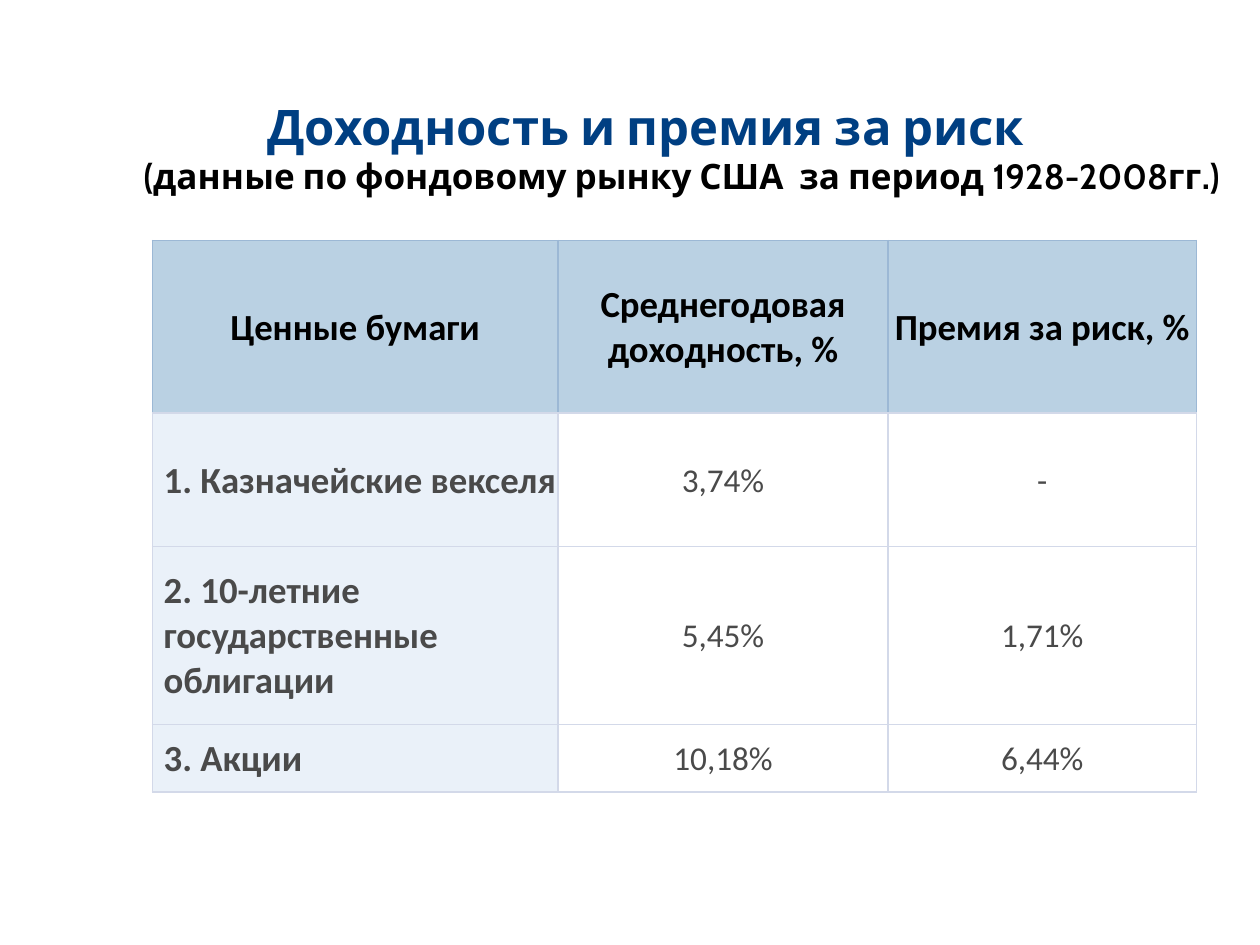
from dataclasses import dataclass

from lxml.etree import SubElement
from pptx import Presentation
from pptx.dml.color import RGBColor
from pptx.enum.text import MSO_ANCHOR, PP_ALIGN
from pptx.oxml.ns import qn
from pptx.util import Cm, Pt

HEADER_LINE = "9CB8D5"
BODY_LINE = "D3D9E9"


@dataclass
class CellStyle:
    size: int
    bold: bool
    color: str
    fill: str | None
    line: str
    align: PP_ALIGN = PP_ALIGN.CENTER
    margin_left: float = 0.03


HEADER = CellStyle(21, True, "000000", "BAD1E3", HEADER_LINE)
LABEL = CellStyle(21, True, "4A4A4A", "EAF1F9", BODY_LINE, PP_ALIGN.LEFT, 0.23)
VALUE = CellStyle(19, False, "4A4A4A", None, BODY_LINE)

COLUMN_WIDTHS = [8.18, 6.65, 6.22]
ROW_HEIGHTS = [3.48, 2.69, 3.58, 1.37]
ROWS = [
    ("Ценные бумаги", "Среднегодовая доходность, %", "Премия за риск, %"),
    ("1. Казначейские векселя", "3,74%", "-"),
    ("2. 10-летние государственные облигации", "5,45%", "1,71%"),
    ("3. Акции", "10,18%", "6,44%"),
]


def rgb(color: str) -> RGBColor:
    return RGBColor.from_string(color)


def set_font(para, name: str, size: int, bold: bool, color: str) -> None:
    font = para.font
    font.name, font.size, font.bold = name, Pt(size), bold
    font.color.rgb = rgb(color)


def write_heading(box, text: str, place: tuple, size: int, color: str) -> None:
    box.left, box.top, box.width, box.height = (Cm(length) for length in place)
    frame = box.text_frame
    frame.word_wrap = True
    frame.vertical_anchor = MSO_ANCHOR.MIDDLE
    frame.margin_left = frame.margin_right = 0
    frame.margin_top = frame.margin_bottom = 0
    para = frame.paragraphs[0]
    para.text = text
    para.alignment = PP_ALIGN.CENTER
    set_font(para, "Cabin", size, True, color)


def add_borders(cell, colors: dict[str, str]) -> None:
    properties = cell._tc.get_or_add_tcPr()
    for position, (side, color) in enumerate(colors.items()):
        line = properties.makeelement(qn(f"a:{side}"), {"w": str(Pt(1))})
        fill = SubElement(line, qn("a:solidFill"))
        SubElement(fill, qn("a:srgbClr"), val=color)
        properties.insert(position, line)  # borders precede the fill


def fill_cell(cell, text: str, style: CellStyle) -> None:
    cell.margin_left = Cm(style.margin_left)
    cell.margin_right = cell.margin_top = Cm(0.03)
    cell.margin_bottom = 0
    cell.vertical_anchor = MSO_ANCHOR.MIDDLE
    para = cell.text_frame.paragraphs[0]
    para.text = text
    para.alignment = style.align
    set_font(para, "Calibri", style.size, style.bold, style.color)
    if style.fill:
        cell.fill.solid()
        cell.fill.fore_color.rgb = rgb(style.fill)
    else:
        cell.fill.background()
    top = HEADER_LINE if style is HEADER else BODY_LINE
    add_borders(cell, {"lnL": style.line, "lnR": style.line,
                       "lnT": top, "lnB": BODY_LINE})


def add_returns_table(page) -> None:
    frame = page.shapes.add_table(
        len(ROWS), len(COLUMN_WIDTHS), Cm(3.07), Cm(4.85),
        Cm(sum(COLUMN_WIDTHS)), Cm(sum(ROW_HEIGHTS)))
    table = frame.table
    table.horz_banding = False
    for column, width in zip(table.columns, COLUMN_WIDTHS):
        column.width = Cm(width)
    for row, height in zip(table.rows, ROW_HEIGHTS):
        row.height = Cm(height)
    for r, texts in enumerate(ROWS):
        for c, text in enumerate(texts):
            style = HEADER if r == 0 else LABEL if c == 0 else VALUE
            fill_cell(table.cell(r, c), text, style)


def main() -> None:
    deck = Presentation()
    deck.slide_width, deck.slide_height = Cm(25.4), Cm(19.05)
    page = deck.slides.add_slide(deck.slide_layouts[5])

    # Title and the period it covers
    write_heading(page.shapes.title, "Доходность и премия за риск",
                  (3.02, 1.84, 20, 1.4), 28, "003F82")
    subtitle = page.shapes.add_textbox(0, 0, 0, 0)
    write_heading(subtitle,
                  "(данные по фондовому рынку США  за период 1928-2008гг.)",
                  (2.24, 3.03, 23, 1), 20, "000000")

    # Returns by security type
    add_returns_table(page)
    deck.save("out.pptx")


if __name__ == "__main__":
    main()
